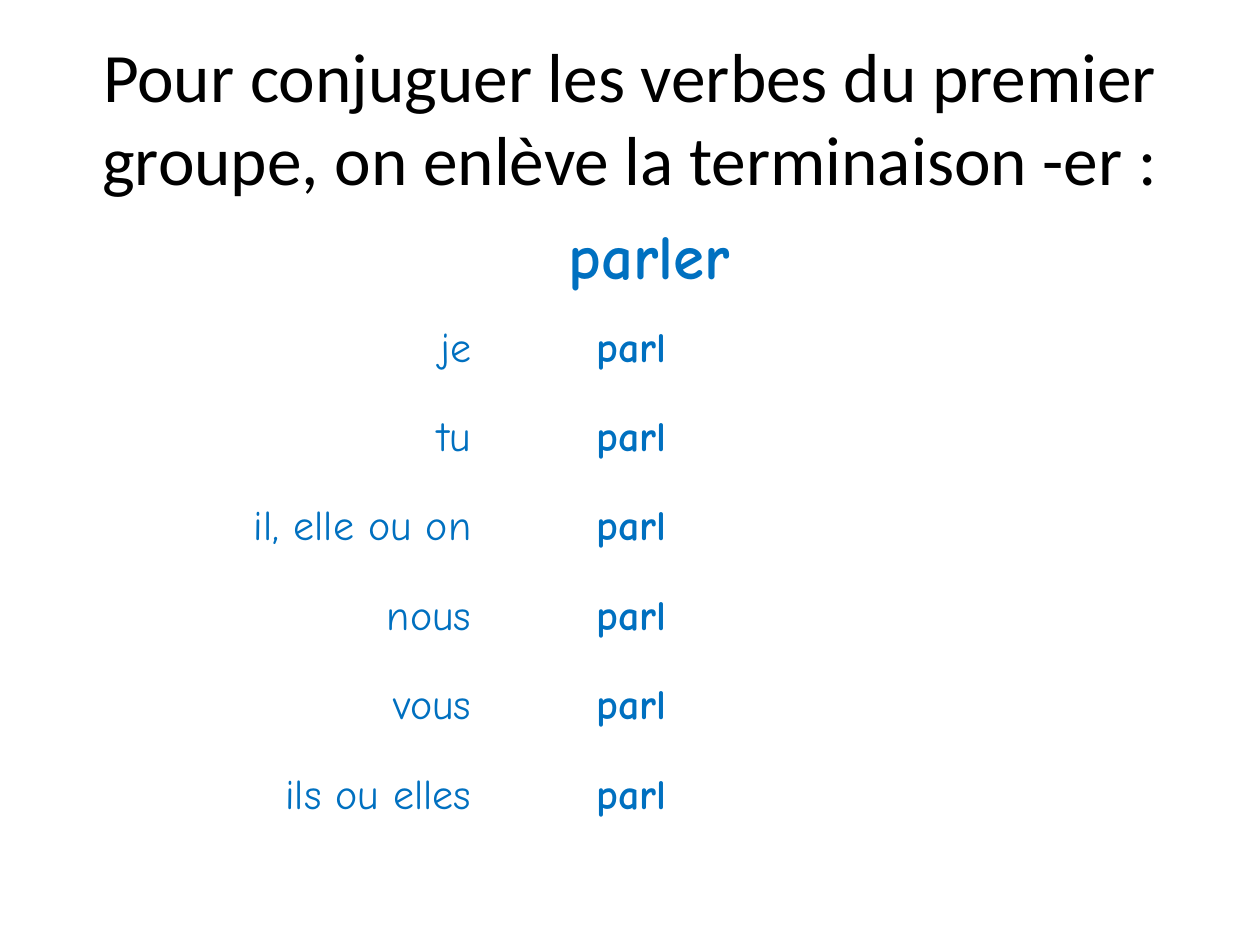
import dataclasses

import pptx
import pptx.dml.color
import pptx.enum.text
import pptx.util

Inches = pptx.util.Inches
ALIGN = pptx.enum.text.PP_ALIGN
MIDDLE = pptx.enum.text.MSO_ANCHOR.MIDDLE


@dataclasses.dataclass(frozen=True)
class Theme:
    title_font: str = "Calibri"
    table_font: str = "Comic Neue"
    title_color: str = "000000"
    verb_color: str = "0070C0"
    background: str = "FFFFFF"
    title_size: float = 39.6
    infinitive_size: float = 36
    form_size: float = 24


class LessonSlide:
    def __init__(self, deck, theme):
        self.theme = theme
        self.slide = deck.slides.add_slide(deck.slide_layouts[5])

    def format_text(self, frame, font, size, color, bold, align):
        for paragraph in frame.paragraphs:
            paragraph.alignment = align
            for run in paragraph.runs:
                run.font.name = font
                run.font.size = pptx.util.Pt(size)
                run.font.bold = bold
                run.font.color.rgb = pptx.dml.color.RGBColor.from_string(color)

    def title(self, text, left, top, width, height):
        heading = self.slide.shapes.title
        heading.left, heading.top = Inches(left), Inches(top)
        heading.width, heading.height = Inches(width), Inches(height)
        frame = heading.text_frame
        frame.text = text
        frame.word_wrap = True
        frame.auto_size = pptx.enum.text.MSO_AUTO_SIZE.NONE
        frame.vertical_anchor = MIDDLE
        self.format_text(frame, self.theme.title_font, self.theme.title_size,
                         self.theme.title_color, False, ALIGN.CENTER)

    def fill_cell(self, cell, text, size, bold, align):
        cell.text = text
        cell.vertical_anchor = MIDDLE
        self.format_text(cell.text_frame, self.theme.table_font, size,
                         self.theme.verb_color, bold, align)

    def conjugation(self, infinitive, stem, pronouns, left, top, widths, row_height):
        row_count = len(pronouns) + 1
        table = self.slide.shapes.add_table(
            row_count, len(widths), Inches(left), Inches(top),
            Inches(sum(widths)), Inches(row_height * row_count)).table
        table.first_row = table.horz_banding = False
        for column, width in zip(table.columns, widths):
            column.width = Inches(width)
        for row in table.rows:
            row.height = Inches(row_height)
        for cell in table.iter_cells():
            cell.fill.solid()
            cell.fill.fore_color.rgb = pptx.dml.color.RGBColor.from_string(
                self.theme.background)

        # Infinitive across the full width
        table.cell(0, 0).merge(table.cell(0, len(widths) - 1))
        self.fill_cell(table.cell(0, 0), infinitive, self.theme.infinitive_size,
                       True, ALIGN.CENTER)

        # Pronoun and stem; the ending column stays open
        for row, pronoun in enumerate(pronouns, start=1):
            self.fill_cell(table.cell(row, 0), pronoun, self.theme.form_size,
                           False, ALIGN.RIGHT)
            self.fill_cell(table.cell(row, 1), stem, self.theme.form_size,
                           True, ALIGN.RIGHT)


def main():
    deck = pptx.Presentation()
    deck.slide_width, deck.slide_height = Inches(10), Inches(7.5)
    lesson = LessonSlide(deck, Theme())

    # Conjugation table
    lesson.conjugation(
        "parler", "parl",
        ["je", "tu", "il, elle ou on", "nous", "vous", "ils ou elles"],
        left=1.22, top=1.7, widths=[2.62, 1.55, 3.7], row_height=0.71)

    # Rule
    lesson.title(
        "Pour conjuguer les verbes du premier groupe, "
        "on enlève la terminaison -er :",
        left=0.5, top=0.3, width=9, height=1.25)

    deck.save("out.pptx")


if __name__ == "__main__":
    main()
